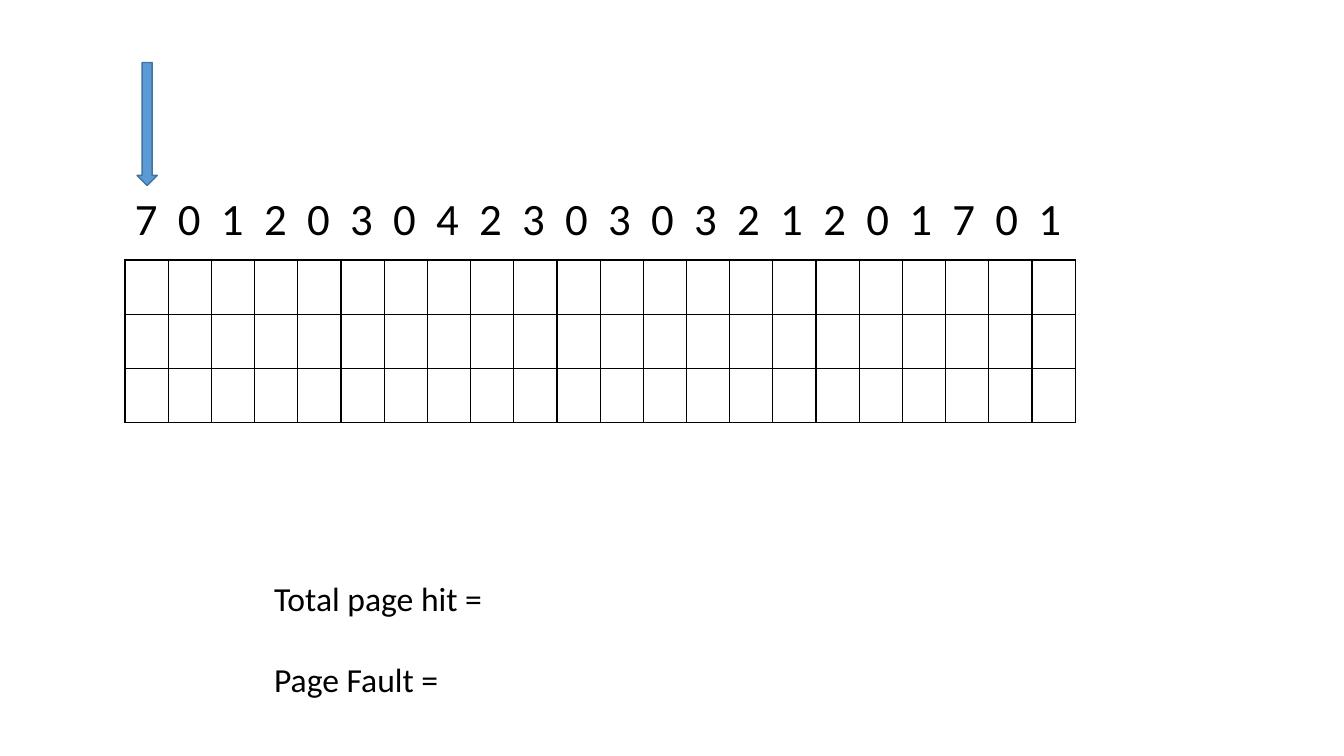
from lxml import etree
from pptx import Presentation
from pptx.dml.color import RGBColor
from pptx.enum import shapes, text
from pptx.oxml import ns
from pptx.util import Inches, Pt

REFERENCES = "7012030423030321201701"
FRAMES = 3
BLACK = "000000"


def colour(code):
    return RGBColor.from_string(code)


def add_element(parent, tag, **attributes):
    values = {name: str(value) for name, value in attributes.items()}
    return etree.SubElement(parent, ns.qn(tag), values)


def add_text(page, lines, left, top, width, height, size, gap=0, tab_step=0, tabs=0):
    box = page.shapes.add_textbox(Inches(left), Inches(top), Inches(width), Inches(height))
    frame = box.text_frame
    frame.word_wrap = True
    frame.auto_size = text.MSO_AUTO_SIZE.SHAPE_TO_FIT_TEXT
    for index, line in enumerate(lines):
        para = frame.add_paragraph() if index else frame.paragraphs[0]
        para.add_run().text = line
        if index:
            para.space_before = Pt(gap)
        if tabs:
            stops = add_element(para._p.get_or_add_pPr(), "a:tabLst")
            for stop in range(1, tabs + 1):
                add_element(stops, "a:tab", pos=Inches(stop * tab_step), algn="l")
        para.font.name = "Calibri"
        para.font.size = Pt(size)
        para.font.color.rgb = colour(BLACK)


def style_cell(cell):
    properties = cell._tc.get_or_add_tcPr()
    for side in ("a:lnL", "a:lnR", "a:lnT", "a:lnB"):
        border = add_element(properties, side, w=Pt(1))
        add_element(add_element(border, "a:solidFill"), "a:srgbClr", val=BLACK)
    cell.fill.background()


def add_frame_grid(page, left, top, width, height):
    columns = len(REFERENCES)
    table = page.shapes.add_table(
        FRAMES, columns, Inches(left), Inches(top), Inches(width), Inches(height)
    ).table
    table.first_row = False
    table.horz_banding = False
    for column in table.columns:
        column.width = Inches(width / columns)
    for cell in table.iter_cells():
        style_cell(cell)


def add_down_arrow(page, left, top, width, height):
    arrow = page.shapes.add_shape(
        shapes.MSO_SHAPE.DOWN_ARROW, Inches(left), Inches(top), Inches(width), Inches(height)
    )
    arrow.shadow.inherit = False
    arrow.fill.solid()
    arrow.fill.fore_color.rgb = colour("5B9BD5")
    arrow.line.color.rgb = colour("43739E")
    arrow.line.width = Pt(1)


def main():
    deck = Presentation()
    deck.slide_width = Inches(13.33)
    deck.slide_height = Inches(7.5)
    page = deck.slides.add_slide(deck.slide_layouts[6])
    gaps = len(REFERENCES) - 1
    add_frame_grid(page, 1.24, 2.58, 9.43, 1.61)
    add_text(page, ["\t".join(REFERENCES)], 1.24, 1.84, 10.72, 0.64, 32,
             tab_step=8.96 / gaps, tabs=gaps)
    add_text(page, ["Total page hit =", "Page Fault ="], 2.62, 5.68, 5.44, 1.31, 24, gap=29)
    add_down_arrow(page, 1.36, 0.62, 0.2, 1.22)
    deck.save("out.pptx")


if __name__ == "__main__":
    main()
